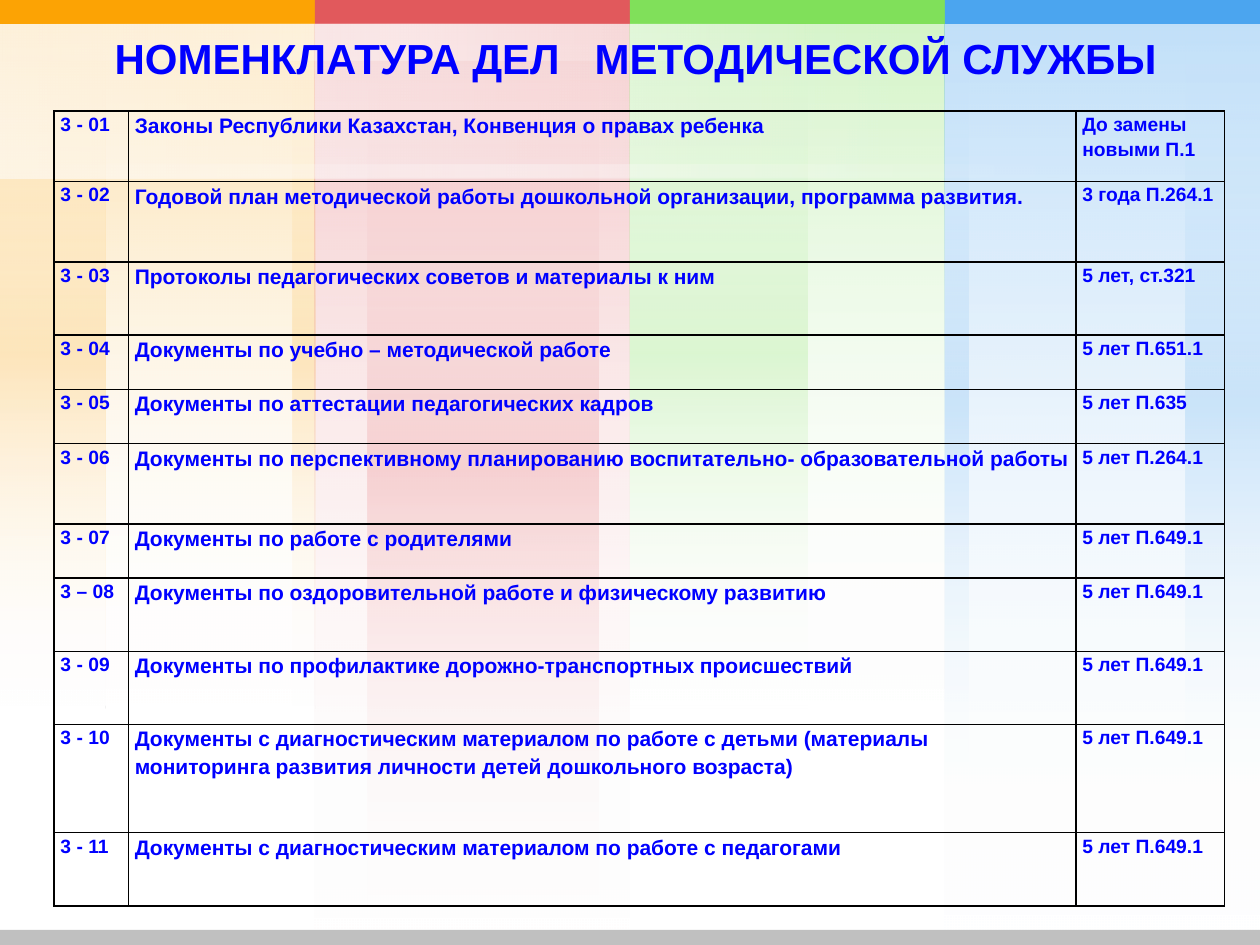
"""Build a slide listing the methodical service's register of files."""
from pptx import Presentation
from pptx.dml.color import RGBColor
from pptx.enum.shapes import MSO_SHAPE
from pptx.enum.text import MSO_ANCHOR, MSO_AUTO_SIZE, PP_ALIGN
from pptx.oxml import parse_xml
from pptx.oxml.ns import nsdecls
from pptx.util import Inches, Pt

RECTANGLE = MSO_SHAPE.RECTANGLE
TOP = MSO_ANCHOR.TOP
NO_AUTOFIT = MSO_AUTO_SIZE.NONE
CENTER = PP_ALIGN.CENTER

THEME = {
    "font": "Arial", "text": "0000FF", "border": "000000", "white": "FFFFFF",
    "footer": "C0C0C0", "orange": "FCA304", "red": "E1595C",
    "green": "80E05A", "blue": "4BA5EF",
    "title_size": 24, "name_size": 12, "label_size": 11,
    "tint": 20, "sheen": 35, "title_gap": 1330,
}

TITLE_PARTS = ["НОМЕНКЛАТУРА ДЕЛ", " ", "МЕТОДИЧЕСКОЙ СЛУЖБЫ"]
FILES = [
    ("3 - 01", "Законы Республики Казахстан, Конвенция о правах ребенка", "До замены новыми П.1", 0.56),
    ("3 - 02", "Годовой план методической работы дошкольной организации, программа развития.",
     "3 года П.264.1", 0.64),
    ("3 - 03", "Протоколы педагогических советов и материалы к ним", "5 лет, ст.321", 0.58),
    ("3 - 04", "Документы по учебно – методической работе", "5 лет П.651.1", 0.43),
    ("3 - 05", "Документы по аттестации педагогических кадров", "5 лет П.635", 0.43),
    ("3 - 06", "Документы по перспективному планированию воспитательно- образовательной работы",
     "5 лет П.264.1", 0.64),
    ("3 - 07", "Документы по работе с родителями", "5 лет П.649.1", 0.43),
    ("3 – 08", "Документы по оздоровительной работе и физическому развитию", "5 лет П.649.1", 0.58),
    ("3 - 09", "Документы по профилактике дорожно-транспортных происшествий", "5 лет П.649.1", 0.58),
    ("3 - 10", "Документы с диагностическим материалом по работе с детьми "
     "(материалы мониторинга развития личности детей дошкольного возраста)", "5 лет П.649.1", 0.86),
    ("3 - 11", "Документы с диагностическим материалом по работе с педагогами", "5 лет П.649.1", 0.58),
]
COLUMN_WIDTHS = [0.59, 7.52, 1.18]
COLUMN_SIZES = ["label_size", "name_size", "label_size"]

STRIPE_WIDTH = 2.5
STRIPES = [
    ("orange", 5.62, [(2.32, 0.18, 5.62), (0, 0.84, 5.62)]),
    ("red", 7.5, [(2.92, 1.83, 7.5)]),
    ("green", 5.62, [(5, 1.41, 5.62)]),
    ("blue", 7.47, [(7.5, 0.19, 6.37), (9.41, 0.59, 6.37)]),
]
SHEEN_WASH = (3.15, -2.95, 1.22, 7.51)
SHEEN_GLOWS = [(4.16, -2.85, 0.1, 8.42), (3.06, -2.87, 0.29, 6.41)]


def add_block(slide, box, color=None):
    block = slide.shapes.add_shape(RECTANGLE, *map(Inches, box))
    block.shadow.inherit = False
    block.line.fill.background()
    if color:
        block.fill.solid()
        block.fill.fore_color.rgb = RGBColor.from_string(THEME[color])
    return block


def add_fade(slide, box, color, opacity, glow, rotation):
    fade = add_block(slide, box)
    fade.rotation = rotation
    stops = [(0, color, opacity), (100, "white", 0)]
    if glow:
        stops = [(0, "white", 0), (50, color, opacity), (100, "white", 0)]
    stop_xml = "".join(
        f'<a:gs pos="{position * 1000}"><a:srgbClr val="{THEME[shade]}">'
        f'<a:alpha val="{alpha * 1000}"/></a:srgbClr></a:gs>'
        for position, shade, alpha in stops)
    fade._element.spPr.insert(2, parse_xml(
        f'<a:gradFill {nsdecls("a")} rotWithShape="1"><a:gsLst>{stop_xml}</a:gsLst>'
        '<a:lin ang="5400000" scaled="0"/></a:gradFill>'))


def add_layers(slide, wash, glows, color, opacity, rotation=0):
    layers = [(wash, False), *((glow, True) for glow in glows), (wash, False)]
    for box, is_glow in layers:
        add_fade(slide, box, color, opacity, is_glow, rotation)


def add_backdrop(slide):
    for index, (color, height, glows) in enumerate(STRIPES):
        wash = (index * STRIPE_WIDTH, 0, STRIPE_WIDTH, height)
        glow_boxes = [(left, 0, width, depth) for left, width, depth in glows]
        add_layers(slide, wash, glow_boxes, color, THEME["tint"])
    for index, (color, _, _) in enumerate(STRIPES):
        add_block(slide, (index * STRIPE_WIDTH, 0, STRIPE_WIDTH, 0.19), color)
    add_layers(slide, SHEEN_WASH, SHEEN_GLOWS, "white", THEME["sheen"], 270)
    add_block(slide, (0, 7.38, 10, 0.12), "footer")


def add_run(paragraph, text, size):
    run = paragraph.add_run()
    run.text = text
    run.font.name = THEME["font"]
    run.font.size = Pt(THEME[size])
    run.font.bold = True
    run.font.color.rgb = RGBColor.from_string(THEME["text"])
    return run


def add_title(slide):
    title = slide.shapes.title
    title.left, title.top, title.width, title.height = map(Inches, (0.2, 0.21, 9.69, 0.5))
    frame = title.text_frame
    frame.word_wrap = True
    frame.auto_size = NO_AUTOFIT
    frame.vertical_anchor = TOP
    heading = frame.paragraphs[0]
    heading.alignment = CENTER
    for part in TITLE_PARTS:
        run = add_run(heading, part, "title_size")
        if part == " ":
            run.font._element.set("spc", str(THEME["title_gap"]))
    slide.shapes._spTree.append(title._element)


def fill_cell(cell, text, size):
    cell.margin_left = cell.margin_right = Inches(0.05)
    cell.margin_top = cell.margin_bottom = 0
    cell.vertical_anchor = TOP
    cell.fill.background()
    for index, side in enumerate("LRTB"):
        cell._tc.get_or_add_tcPr().insert(index, parse_xml(
            f'<a:ln{side} {nsdecls("a")} w="12700"><a:solidFill>'
            f'<a:srgbClr val="{THEME["border"]}"/></a:solidFill></a:ln{side}>'))
    paragraph = cell.text_frame.paragraphs[0]
    paragraph.line_spacing = 1.15
    add_run(paragraph, text, size)


def add_register(slide):
    heights = [entry[-1] for entry in FILES]
    box = (0.43, 0.88, sum(COLUMN_WIDTHS), sum(heights))
    register = slide.shapes.add_table(
        len(FILES), len(COLUMN_WIDTHS), *map(Inches, box)).table
    register.first_row = False
    register.horz_banding = False
    for column, width in zip(register.columns, COLUMN_WIDTHS):
        column.width = Inches(width)
    for row, (*texts, height) in zip(register.rows, FILES):
        row.height = Inches(height)
        for cell, text, size in zip(row.cells, texts, COLUMN_SIZES):
            fill_cell(cell, text, size)


def main():
    deck = Presentation()
    deck.slide_width, deck.slide_height = Inches(10), Inches(7.5)
    slide = deck.slides.add_slide(deck.slide_layouts[5])
    slide.background.fill.solid()
    slide.background.fill.fore_color.rgb = RGBColor.from_string(THEME["white"])
    add_backdrop(slide)
    add_register(slide)
    add_title(slide)
    deck.save("out.pptx")


if __name__ == "__main__":
    main()
